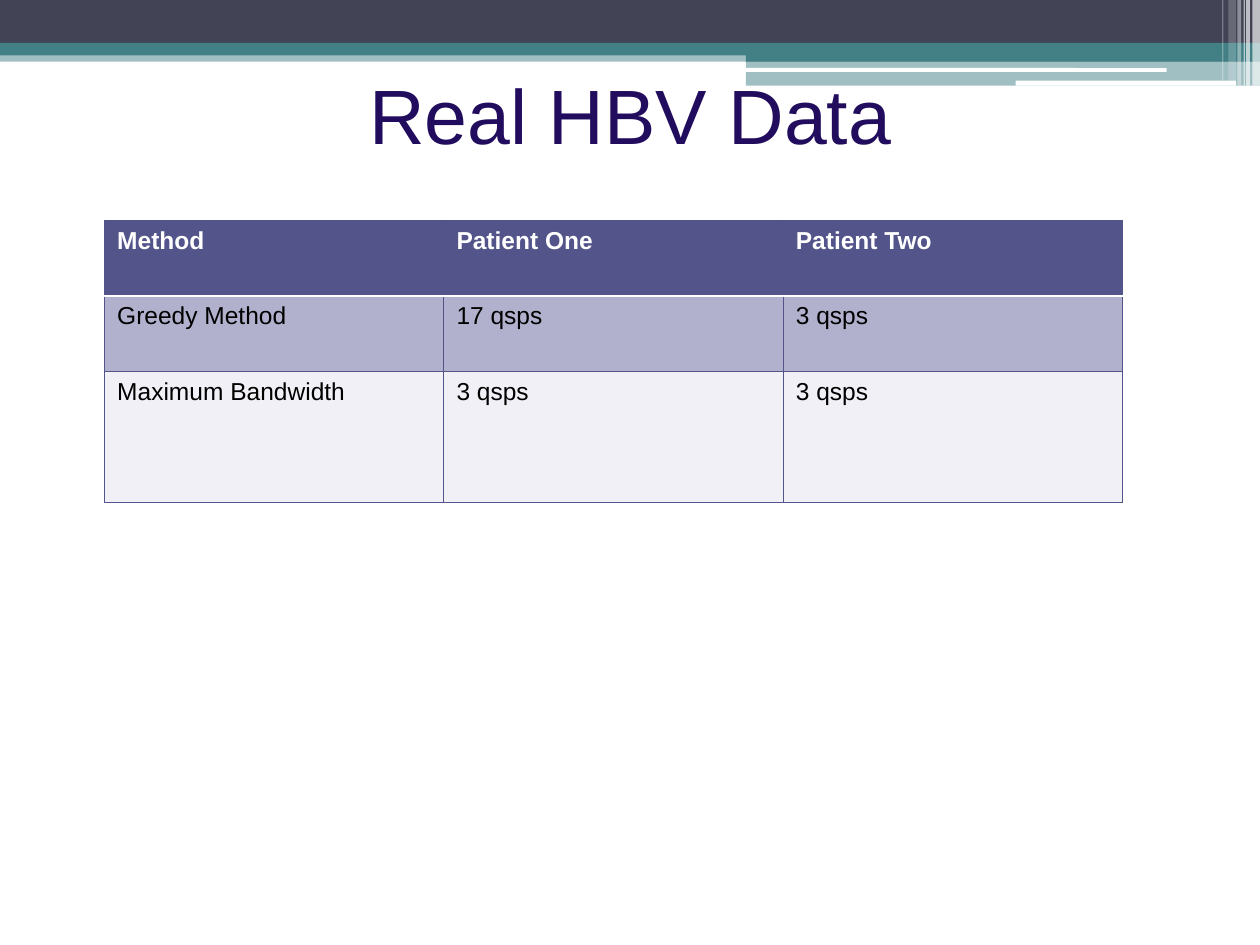
from lxml import etree
from pptx import Presentation
from pptx import util as u
from pptx.dml.color import RGBColor
from pptx.enum import shapes, text
from pptx.oxml.ns import qn

HUES = {
    "dark": "424456", "teal": "438086", "white": "FFFFFF", "title": "220C5E",
    "head": "53548A", "band": "B1B1CE", "pale": "F0F0F6", "black": "000000",
}


class Deck:
    def __init__(self, font):
        self.font = font
        self.prs = Presentation()
        self.prs.slide_width, self.prs.slide_height = u.Inches(10), u.Inches(7.5)
        self.slide = self.prs.slides.add_slide(self.prs.slide_layouts[6])

    def color(self, name):
        return RGBColor.from_string(HUES[name])

    def style(self, par, size, hue, bold=False):
        font = par.font
        font.name, font.size, font.bold = self.font, u.Pt(size), bold
        font.color.rgb = self.color(hue)

    def bar(self, box, hue, alpha=100, kind=shapes.MSO_SHAPE.RECTANGLE):
        """Add a borderless bar; alpha is its opacity in percent."""
        bar = self.slide.shapes.add_shape(kind, *map(u.Inches, box))
        bar.shadow.inherit = False
        bar.line.fill.background()
        bar.fill.solid()
        bar.fill.fore_color.rgb = self.color(hue)
        if alpha < 100:
            tone = bar.fill._xPr.find(qn("a:solidFill"))[0]
            etree.SubElement(tone, qn("a:alpha"), val=str(alpha * 1000))

    def title(self, box, words):
        frame = self.slide.shapes.add_textbox(*map(u.Inches, box)).text_frame
        frame.word_wrap = True
        frame.vertical_anchor = text.MSO_ANCHOR.BOTTOM
        frame.margin_left = frame.margin_right = 0
        frame.margin_top = frame.margin_bottom = 0
        par = frame.paragraphs[0]
        par.text, par.alignment = words, text.PP_ALIGN.CENTER
        self.style(par, 44, "title")

    def edge(self, cell, side, hue, width):
        """Draw one cell border; must run before the cell is filled."""
        line = etree.SubElement(cell._tc.get_or_add_tcPr(), qn("a:ln" + side),
                                w=str(u.Pt(width)))
        fill = etree.SubElement(line, qn("a:solidFill"))
        etree.SubElement(fill, qn("a:srgbClr"), val=HUES[hue])

    def table(self, box, heights, rows, fills):
        grid = self.slide.shapes.add_table(
            len(rows), len(rows[0]), *map(u.Inches, box)).table
        for r, row in enumerate(rows):
            grid.rows[r].height = u.Inches(heights[r])
            for c, words in enumerate(row):
                cell = grid.cell(r, c)
                for side in "LRTB":
                    rule = (r, side) in ((0, "B"), (1, "T"))
                    self.edge(cell, side, *(("white", 1.5) if rule else ("head", 0.75)))
                cell.fill.solid()
                cell.fill.fore_color.rgb = self.color(fills[r])
                cell.text = words
                self.style(cell.text_frame.paragraphs[0], 14,
                           "black" if r else "white", bold=r == 0)


def main():
    deck = Deck("Arial")
    for box, hue, alpha in (
        ((0, 0.4, 10, 0.09), "teal", 50),
        ((0, 0, 10, 0.34), "dark", 100),
        ((0, 0.34, 10, 0.1), "teal", 100),
        ((5.92, 0.39, 4.08, 0.1), "teal", 100),
        ((5.92, 0.48, 4.08, 0.2), "teal", 50),
    ):
        deck.bar(box, hue, alpha)
    for box in ((5.91, 0.54, 3.35, 0.03), (8.06, 0.64, 1.75, 0.04)):
        deck.bar(box, "white", kind=shapes.MSO_SHAPE.ROUNDED_RECTANGLE)
    for left, width, height, alpha in (
        (9.94, 0.06, 0.68, 65), (9.89, 0.03, 0.68, 65), (9.87, 0.01, 0.68, 60),
        (9.82, 0.03, 0.68, 40), (9.75, 0.06, 0.64, 20), (9.7, 0.01, 0.64, 30),
    ):
        deck.bar((left, 0, width, height), "white", alpha)

    deck.title((0.44, 0.53, 9.13, 0.74), "Real HBV Data")
    deck.table(
        (0.83, 1.75, 8.08, 2.25), (0.6, 0.6, 1.04),
        (("Method", "Patient One", "Patient Two"),
         ("Greedy Method", "17 qsps", "3 qsps"),
         ("Maximum Bandwidth", "3 qsps", "3 qsps")),
        ("head", "band", "pale"))
    deck.prs.save("out.pptx")


if __name__ == "__main__":
    main()
